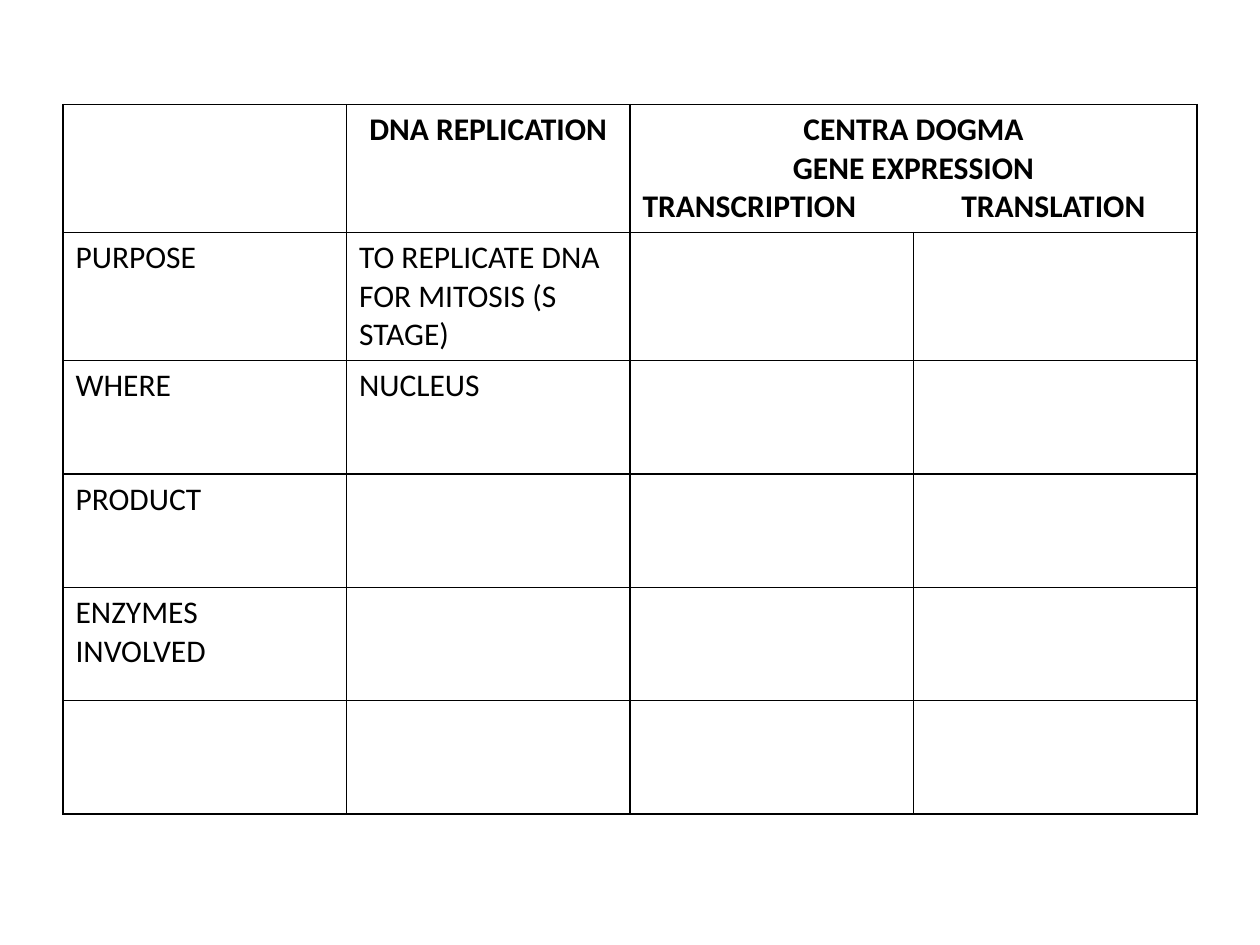
from dataclasses import dataclass

from lxml.etree import SubElement
from pptx import Presentation
from pptx.dml.color import RGBColor
from pptx.enum.text import PP_ALIGN as Align
from pptx.oxml.ns import qn
from pptx.slide import Slide
from pptx.table import _Cell as Cell
from pptx.util import Inches, Pt


@dataclass(frozen=True)
class Theme:
    font: str = "Calibri"
    size: int = 18
    ink: str = "000000"
    paper: str = "FFFFFF"
    border: int = 1


@dataclass(frozen=True)
class Entry:
    row: int
    column: int
    lines: tuple[str, ...]
    alignments: tuple[Align, ...] = (Align.LEFT,)
    bold: bool = False
    tab_stop: float = 0


THEME = Theme()
COLUMNS, ROWS = 4, 6
COLUMN_WIDTH, ROW_HEIGHT = 2.25, 0.9

ENTRIES = (
    Entry(0, 1, ("DNA REPLICATION",), (Align.CENTER,), bold=True),
    Entry(
        0,
        2,
        ("CENTRA DOGMA", "GENE EXPRESSION", "TRANSCRIPTION\tTRANSLATION"),
        (Align.CENTER, Align.CENTER, Align.LEFT),
        bold=True,
        tab_stop=2.53,
    ),
    Entry(1, 0, ("PURPOSE",)),
    Entry(1, 1, ("TO REPLICATE DNA FOR MITOSIS (S STAGE)",)),
    Entry(2, 0, ("WHERE",)),
    Entry(2, 1, ("NUCLEUS",)),
    Entry(3, 0, ("PRODUCT",)),
    Entry(4, 0, ("ENZYMES INVOLVED",)),
)


def write_line(paragraph, text: str, *, alignment: Align, bold: bool, tab_stop: float) -> None:
    paragraph.alignment = alignment
    run = paragraph.add_run()
    run.text = text
    run.font.name = THEME.font
    run.font.size = Pt(THEME.size)
    run.font.bold = bold
    run.font.color.rgb = RGBColor.from_string(THEME.ink)
    if "\t" in text:
        tabs = SubElement(paragraph._p.get_or_add_pPr(), qn("a:tabLst"))
        SubElement(tabs, qn("a:tab"), pos=str(Inches(tab_stop)), algn="l")


def format_cell(cell: Cell) -> None:
    properties = cell._tc.get_or_add_tcPr()
    for side in ("lnL", "lnR", "lnT", "lnB"):
        line = SubElement(properties, qn(f"a:{side}"), w=str(Pt(THEME.border)))
        fill = SubElement(line, qn("a:solidFill"))
        SubElement(fill, qn("a:srgbClr"), val=THEME.ink)
    cell.fill.solid()
    cell.fill.fore_color.rgb = RGBColor.from_string(THEME.paper)


def fill_entry(cell: Cell, entry: Entry) -> None:
    frame = cell.text_frame
    for index, (text, alignment) in enumerate(zip(entry.lines, entry.alignments)):
        paragraph = frame.add_paragraph() if index else frame.paragraphs[0]
        write_line(
            paragraph, text, alignment=alignment, bold=entry.bold, tab_stop=entry.tab_stop
        )


def add_comparison_table(slide: Slide) -> None:
    table = slide.shapes.add_table(
        ROWS,
        COLUMNS,
        Inches(0.5),
        Inches(0.83),
        Inches(COLUMNS * COLUMN_WIDTH),
        Inches(ROWS * ROW_HEIGHT),
    ).table
    table.first_row = False
    table.horz_banding = False
    for column in table.columns:
        column.width = Inches(COLUMN_WIDTH)
    for row in table.rows:
        row.height = Inches(ROW_HEIGHT)
    for cell in table.iter_cells():
        format_cell(cell)
    table.cell(0, 2).merge(table.cell(0, 3))
    for entry in ENTRIES:
        fill_entry(table.cell(entry.row, entry.column), entry)


def main() -> None:
    presentation = Presentation()
    presentation.slide_width = Inches(10)
    presentation.slide_height = Inches(7.5)
    slide = presentation.slides.add_slide(presentation.slide_layouts[6])
    add_comparison_table(slide)
    presentation.save("out.pptx")


if __name__ == "__main__":
    main()
